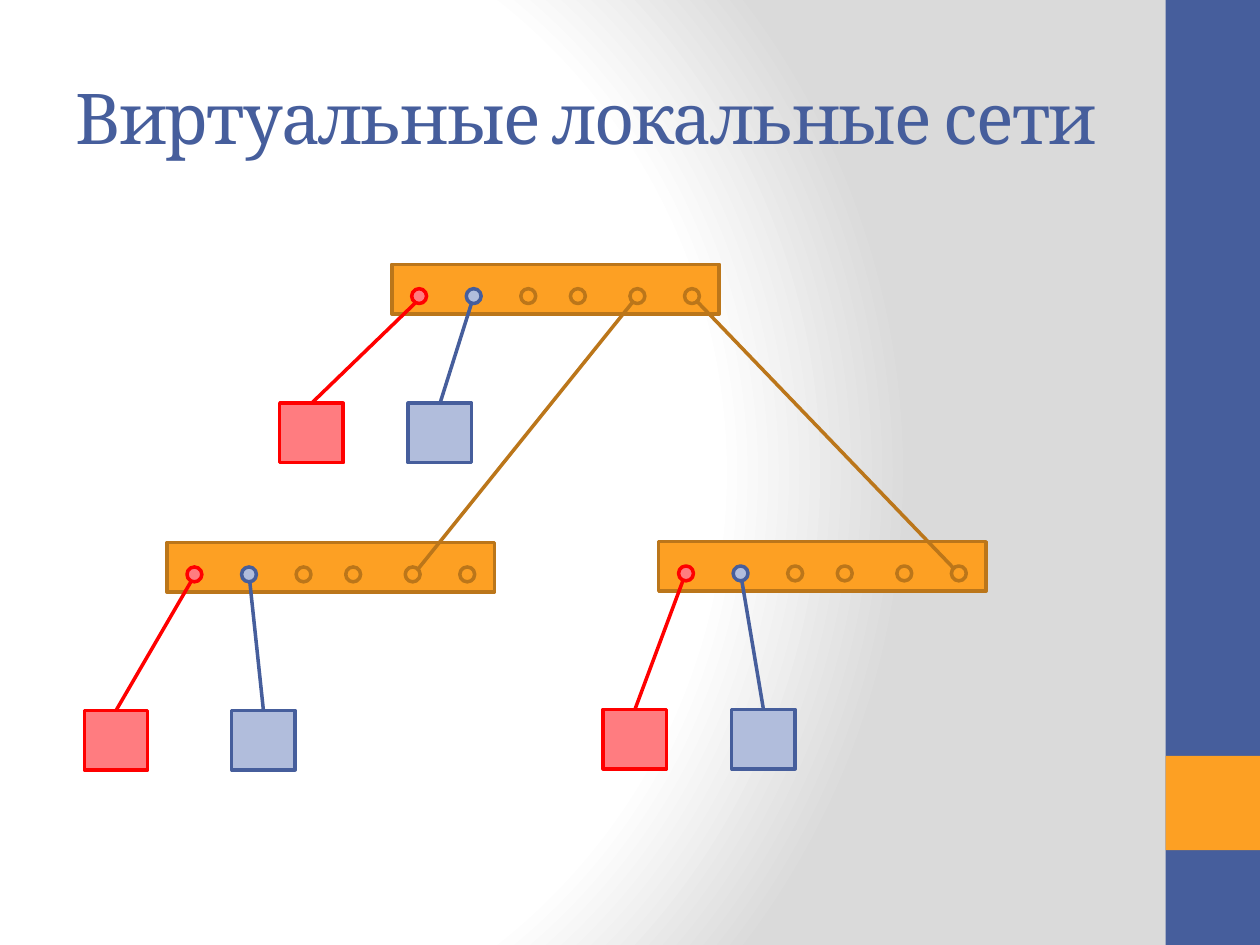
from lxml import etree
from pptx import Presentation
from pptx.dml.color import RGBColor
from pptx.enum.shapes import MSO_CONNECTOR, MSO_SHAPE
from pptx.enum.text import MSO_ANCHOR
from pptx.oxml import parse_xml
from pptx.oxml.ns import nsdecls, qn
from pptx.util import Cm, Pt

RECT, OVAL = MSO_SHAPE.RECTANGLE, MSO_SHAPE.OVAL
STRAIGHT = MSO_CONNECTOR.STRAIGHT
MIDDLE = MSO_ANCHOR.MIDDLE

COLORS = {
    "white": "FFFFFF", "gray": "DADADA",
    "blue": "465E9C", "light_blue": "B1BDDC",
    "orange": "FDA023", "brown": "BB761A",
    "red": "FF0000", "pink": "FF7C80",
}
# fill and outline of each network member
RED = ("pink", "red")
BLUE = ("light_blue", "blue")
TRUNK = ("orange", "brown")

SWITCH_W, SWITCH_H = 6.6, 1.0
PORT = 0.3
PORT_X = (0.4, 1.5, 2.6, 3.6, 4.8, 5.9)
PORT_Y = 0.49
PORT_STYLES = (RED, BLUE) + (TRUNK,) * 4
UPLINKS = (4, 5)
HOST_W, HOST_H = 1.28, 1.2


def rgb(name):
    return RGBColor.from_string(COLORS[name])


def add_shape(s, kind, x, y, w, h, fill, line=None):
    sp = s.shapes.add_shape(kind, Cm(x), Cm(y), Cm(w), Cm(h))
    sp.shadow.inherit = False
    sp.fill.solid()
    sp.fill.fore_color.rgb = rgb(fill)
    if line:
        sp.line.color.rgb = rgb(line)
        sp.line.width = Pt(2)
    else:
        sp.line.fill.background()
    return sp


def add_cable(s, start, end, color):
    cable = s.shapes.add_connector(STRAIGHT, *(Cm(v) for v in (*start, *end)))
    cable.line.color.rgb = rgb(color)
    cable.line.width = Pt(2)
    etree.SubElement(cable._element.spPr, qn("a:effectLst"))
    return cable


def set_background(s):
    """Radial gradient, white in the middle and gray outside."""
    stops = "".join(
        f'<a:gs pos="{pos * 1000}"><a:srgbClr val="{COLORS[name]}"/></a:gs>'
        for pos, name in ((0, "white"), (75, "white"), (100, "gray")))
    s.background.fill.gradient()
    grad = s._element.find(".//" + qn("a:gradFill"))
    grad.getparent().replace(grad, parse_xml(
        f'<a:gradFill {nsdecls("a")} rotWithShape="1"><a:gsLst>{stops}</a:gsLst>'
        '<a:path path="circle">'
        '<a:fillToRect l="20000" t="50000" r="100000" b="50000"/>'
        '</a:path></a:gradFill>'))


def add_sidebar(s, x, y, w, h):
    add_shape(s, RECT, x, y, w, h, "blue")
    add_shape(s, RECT, x, y + 0.8 * h, w, w, "orange")


def add_title(s, x, y, w, h, text):
    tf = s.shapes.add_textbox(Cm(x), Cm(y), Cm(w), Cm(h)).text_frame
    tf.word_wrap = True
    tf.vertical_anchor = MIDDLE
    p = tf.paragraphs[0]
    r = p.add_run()
    r.text = text
    p.font.name = "Cambria"
    p.font.size = Pt(40)
    p.font.color.rgb = rgb("blue")
    r._r.get_or_add_rPr().set("spc", "-100")


def port_center(x, y, i):
    return x + PORT_X[i] + PORT / 2, y + PORT_Y + PORT / 2


def add_ports(s, x, y, indices):
    for i in indices:
        add_shape(s, OVAL, x + PORT_X[i], y + PORT_Y, PORT, PORT, *PORT_STYLES[i])


def add_host(s, x, y, style, port):
    host = add_shape(s, RECT, x, y, HOST_W, HOST_H, *style)
    cable = add_cable(s, port, (x + HOST_W / 2, y), style[1])
    cable.end_connect(host, 0)


def add_switch(s, x, y, red_host, blue_host):
    """Switch without uplink ports; hosts are placed relative to its corner."""
    add_shape(s, RECT, x, y, SWITCH_W, SWITCH_H, *TRUNK)
    add_ports(s, x, y, (0, 2, 3))
    add_host(s, x + red_host[0], y + red_host[1], RED, (x + 0.5, y + 0.75))
    add_host(s, x + blue_host[0], y + blue_host[1], BLUE, port_center(x, y, 1))
    add_ports(s, x, y, (1,))


def add_network(s, x, y):
    """One switch on top, trunked to two switches below it."""
    left = (x - 4.53, y + 5.61)
    right = (x + 5.38, y + 5.59)
    add_switch(s, x, y, (-2.26, 2.8), (0.33, 2.8))
    add_switch(s, *left, (-1.67, 3.38), (1.3, 3.38))
    add_switch(s, *right, (-1.12, 3.38), (1.47, 3.38))
    # each trunk stops at the rim of the lower port that faces the top switch
    for lower, i, dx in ((left, 4, 0.1), (right, 5, -0.1)):
        add_ports(s, *lower, UPLINKS)
        px, py = port_center(*lower, i)
        add_cable(s, port_center(x, y, i), (px + dx, py - 0.1), "brown")
    add_ports(s, x, y, UPLINKS)


def main():
    prs = Presentation()
    prs.slide_width, prs.slide_height = Cm(25.4), Cm(19.05)
    s = prs.slides.add_slide(prs.slide_layouts[6])
    set_background(s)
    add_sidebar(s, 23.5, 0, 1.9, 19.05)
    add_title(s, 1.27, 0.76, 21.17, 3.18, "Виртуальные локальные сети")
    add_network(s, 7.9, 5.33)
    prs.save("out.pptx")


if __name__ == "__main__":
    main()
